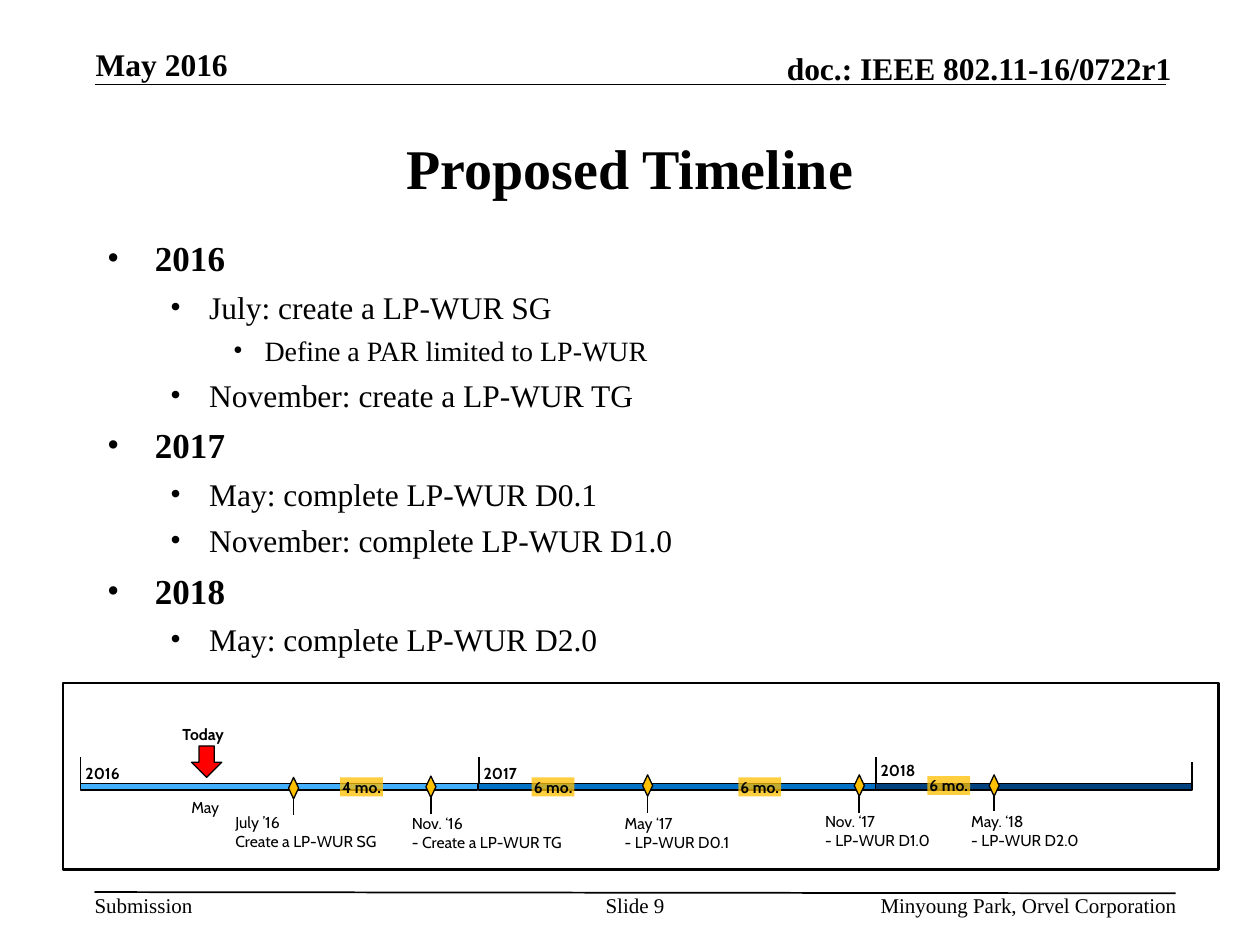
from typing import NamedTuple

import pptx
import pptx.dml.color
import pptx.enum.shapes
import pptx.enum.text
import pptx.oxml
import pptx.oxml.ns
import pptx.util
from pptx.util import Inches

COLORS = {
    "black": "000000", "white": "FFFFFF", "amber": "FFC000", "red": "FF0000",
    "light_blue": "43AFFF", "blue": "0071C5", "navy": "004280",
}
SERIF, SANS = "Times New Roman", "Cabin"
SHAPES = pptx.enum.shapes.MSO_SHAPE
ALIGN = pptx.enum.text.PP_ALIGN
ANCHOR = pptx.enum.text.MSO_ANCHOR
AUTO_SIZE = pptx.enum.text.MSO_AUTO_SIZE


class Level(NamedTuple):
    size: int
    bold: bool
    margin: float
    hanging: float
    space: float


class Year(NamedTuple):
    label: str
    left: float
    width: float
    color: str
    label_top: float


class Milestone(NamedTuple):
    center: float
    diamond_top: float
    stem_top: float
    text: str
    left: float
    top: float
    width: float


LEVELS = [
    Level(20, True, 0.38, 0.38, 6),
    Level(18, False, 0.81, 0.31, 5),
    Level(16, False, 1.25, 0.25, 4.5),
]
OUTLINE = [
    (0, "2016"),
    (1, "July: create a LP-WUR SG"),
    (2, "Define a PAR limited to LP-WUR"),
    (1, "November: create a LP-WUR TG"),
    (0, "2017"),
    (1, "May: complete LP-WUR D0.1"),
    (1, "November: complete LP-WUR D1.0"),
    (0, "2018"),
    (1, "May: complete LP-WUR D2.0"),
]
YEARS = [
    Year("2016", 0.64, 3.15, "light_blue", 6.01),
    Year("2017", 3.8, 3.15, "blue", 6.01),
    Year("2018", 6.95, 2.51, "navy", 5.99),
]
MILESTONES = [
    Milestone(2.33, 6.17, 6.32, "July ’16\vCreate a LP-WUR SG", 1.77, 6.4, 1.44),
    Milestone(3.42, 6.16, 6.31, "Nov. ‘16\n- Create a LP-WUR TG", 3.17, 6.41, 1.51),
    Milestone(5.14, 6.15, 6.3, "May ‘17\n- LP-WUR D0.1", 4.86, 6.41, 1.08),
    Milestone(6.82, 6.15, 6.3, "Nov. ‘17\n- LP-WUR D1.0", 6.45, 6.39, 1.08),
    Milestone(7.89, 6.15, 6.29, "May. ‘18\n- LP-WUR D2.0", 7.61, 6.39, 1.08),
]
DURATIONS = [("4 mo.", 2.7, 6.17), ("6 mo.", 4.22, 6.17),
             ("6 mo.", 5.86, 6.17), ("6 mo.", 7.36, 6.16)]


def rgb(name: str) -> pptx.dml.color.RGBColor:
    return pptx.dml.color.RGBColor.from_string(COLORS[name])


def place(shape, left: float, top: float, width: float, height: float) -> None:
    shape.left, shape.top = Inches(left), Inches(top)
    shape.width, shape.height = Inches(width), Inches(height)


def write(frame, text: str, *, size: float, font: str = SERIF, bold: bool = False,
          align=ALIGN.LEFT, anchor=ANCHOR.TOP, wrap: bool = True, inset: bool = True) -> None:
    """Fill a text frame; each line of the text is a paragraph."""
    frame.text = text
    frame.word_wrap = wrap
    frame.auto_size = AUTO_SIZE.NONE
    frame.vertical_anchor = anchor
    side, edge = (Inches(0.1), Inches(0.05)) if inset else (0, 0)
    frame.margin_left = frame.margin_right = side
    frame.margin_top = frame.margin_bottom = edge
    for para in frame.paragraphs:
        para.alignment = align
        for span in para.runs:
            style_span(span, size, font, bold)


def style_span(span, size: float, font: str, bold: bool) -> None:
    span.font.size = pptx.util.Pt(size)
    span.font.name = font
    span.font.bold = bold
    span.font.color.rgb = rgb("black")


def add_text(page, text: str, left: float, top: float, width: float, height: float, **style) -> None:
    box = page.shapes.add_textbox(Inches(left), Inches(top), Inches(width), Inches(height))
    write(box.text_frame, text, **style)


def add_label(page, text: str, left: float, top: float, width: float,
              height: float = 0.25, bold: bool = False) -> None:
    add_text(page, text, left, top, width, height, size=9, font=SANS, bold=bold, wrap=False)


def add_shape(page, kind, left: float, top: float, width: float, height: float,
              fill: str, line: float = 0.75):
    shape = page.shapes.add_shape(kind, Inches(left), Inches(top), Inches(width), Inches(height))
    shape.shadow.inherit = False
    shape.fill.solid()
    shape.fill.fore_color.rgb = rgb(fill)
    if line:
        shape.line.color.rgb = rgb("black")
        shape.line.width = pptx.util.Pt(line)
    else:
        shape.line.fill.background()
    return shape


def add_line(page, x1: float, y1: float, x2: float, y2: float) -> None:
    line = page.shapes.add_connector(
        pptx.enum.shapes.MSO_CONNECTOR.STRAIGHT, Inches(x1), Inches(y1), Inches(x2), Inches(y2))
    line.line.color.rgb = rgb("black")
    line.line.width = pptx.util.Pt(1)
    pptx.oxml.ns  # namespace helpers
    add_element(line._element.spPr, "a:effectLst")


def add_element(parent, tag: str, **attributes: str):
    element = parent.makeelement(pptx.oxml.ns.qn(tag), attributes)
    parent.append(element)
    return element


def fill_outline(frame) -> None:
    write(frame, "\n".join(text for _, text in OUTLINE), size=18)
    for index, (para, (depth, _)) in enumerate(zip(frame.paragraphs, OUTLINE)):
        level = LEVELS[depth]
        para.level = depth
        properties = para._p.get_or_add_pPr()
        properties.set("marL", str(Inches(level.margin)))
        properties.set("indent", str(-Inches(level.hanging)))
        color = add_element(properties, "a:buClr")
        add_element(color, "a:srgbClr", val=COLORS["black"])
        add_element(properties, "a:buFont", typeface=SERIF)
        add_element(properties, "a:buChar", char="•")
        para.space_before = pptx.util.Pt(level.space if index else 0)
        for span in para.runs:
            style_span(span, level.size, SERIF, level.bold)


def draw_timeline(page) -> None:
    add_shape(page, SHAPES.RECTANGLE, 0.5, 5.42, 9.17, 1.48, "white", 1.5)

    # Year bars, each with a tick and a label at its start
    for year in YEARS:
        add_shape(page, SHAPES.RECTANGLE, year.left, 6.22, year.width, 0.05, year.color)
        add_line(page, year.left, 6.01, year.left, 6.22)
        add_label(page, year.label, year.left - 0.06, year.label_top, 0.48, bold=True)
    add_line(page, 9.46, 6.05, 9.46, 6.26)

    # Milestones
    for mark in MILESTONES:
        add_line(page, mark.center, mark.stem_top, mark.center, mark.stem_top + 0.15)
        add_shape(page, SHAPES.DIAMOND, mark.center - 0.04, mark.diamond_top, 0.08, 0.17, "amber")
        add_label(page, mark.text, mark.left, mark.top, mark.width, 0.4)

    # Today marker
    add_shape(page, SHAPES.DOWN_ARROW, 1.52, 5.92, 0.24, 0.25, "red")
    add_label(page, "Today", 1.35, 5.7, 0.57, bold=True)
    add_label(page, "May", 1.42, 6.28, 0.44)

    # Durations between milestones
    for text, left, top in DURATIONS:
        tag = add_shape(page, SHAPES.RECTANGLE, left, top, 0.34, 0.15, "amber", 0)
        color = tag._element.spPr.find(".//" + pptx.oxml.ns.qn("a:srgbClr"))
        add_element(color, "a:alpha", val="75000")
        write(tag.text_frame, text, size=9, font=SANS, bold=True, align=ALIGN.CENTER, inset=False)


def main() -> None:
    deck = pptx.Presentation()
    deck.slide_width, deck.slide_height = Inches(10), Inches(7.5)
    page = deck.slides.add_slide(deck.slide_layouts[1])

    # Header and footer
    add_line(page, 0.75, 0.67, 9.25, 0.67)
    add_line(page, 0.75, 7.08, 9.33, 7.09)
    heading = dict(size=18, bold=True, anchor=ANCHOR.BOTTOM, inset=False)
    add_text(page, "May 2016", 0.76, 0.36, 2.05, 0.3, **heading)
    add_text(page, "doc.: IEEE 802.11-16/0722r1", 5.47, 0.39, 3.83, 0.3, align=ALIGN.RIGHT, **heading)
    footing = dict(size=12, inset=False)
    add_text(page, "Submission", 0.75, 7.08, 0.78, 0.2, wrap=False, **footing)
    add_text(page, "Slide 9", 4.75, 7.08, 0.58, 0.4, align=ALIGN.CENTER, **footing)
    add_text(page, "Minyoung Park, Orvel Corporation", 5.86, 7.08, 3.48, 0.2, align=ALIGN.RIGHT, **footing)

    # Title and outline
    title, body = page.placeholders
    place(title, 0.75, 0.75, 8.5, 1.16)
    write(title.text_frame, "Proposed Timeline", size=32, bold=True,
          align=ALIGN.CENTER, anchor=ANCHOR.MIDDLE)
    place(body, 0.75, 1.83, 8.5, 4.83)
    fill_outline(body.text_frame)

    draw_timeline(page)
    deck.save("out.pptx")


if __name__ == "__main__":
    main()
